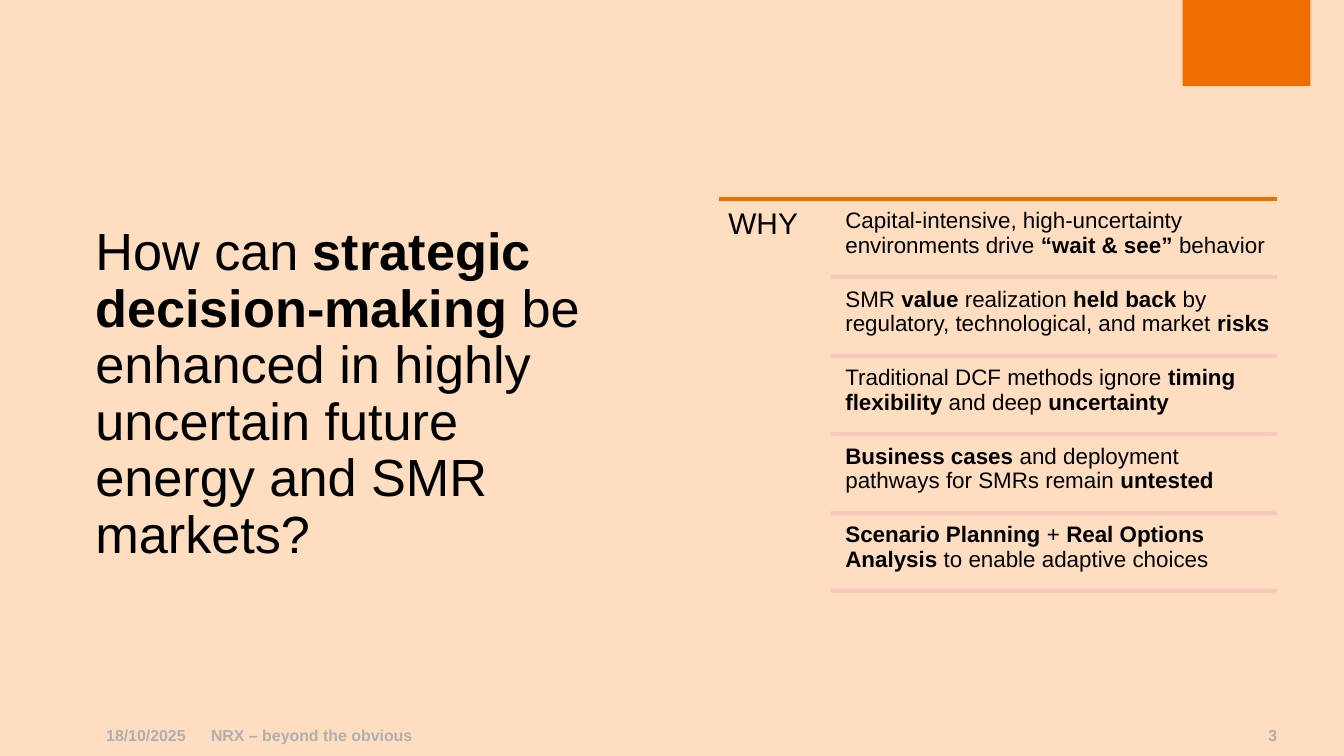
from lxml import etree
from pptx import Presentation
from pptx.dml.color import RGBColor
from pptx.enum import shapes, text
from pptx.oxml.ns import qn
from pptx.util import Inches, Pt

FONT = "Arial"
BACKGROUND, ORANGE, PINK = "FEDDC0", "F06E00", "F8C8BD"
BLACK, GREY = "000000", "AFAFAF"

# Text between ** marks is bold.
TITLE = ("How can **strategic decision-making **be enhanced in highly "
         "uncertain future energy and SMR markets?")
HEADING = "WHY"
REASONS = [
    "Capital-intensive, high-uncertainty environments drive **“wait & see” **behavior",
    "SMR **value** realization **held back **by regulatory, technological, and market **risks**",
    "Traditional DCF methods ignore **timing flexibility** and deep **uncertainty**",
    "**Business cases** and deployment pathways for SMRs remain **untested**",
    "**Scenario Planning** + **Real Options Analysis **to enable adaptive choices",
]
FOOTERS = [  # text, left, width, alignment
    ("**18/10/2025**", 0.79, 0.79, text.PP_ALIGN.LEFT),
    ("**NRX – beyond the obvious**", 1.57, 2.22, text.PP_ALIGN.LEFT),
    ("**3**", 8.94, 1.06, text.PP_ALIGN.CENTER),
]

SLIDE_WIDTH = 10
SLIDE_HEIGHT = SLIDE_WIDTH * 9 / 16
LIST_LEFT, LIST_RIGHT, LIST_TOP, LIST_BOTTOM = 5.35, 9.5, 1.48, 4.4
RULE_LEFT, REASON_LEFT = 6.18, 6.24
ROW_PITCH = (LIST_BOTTOM - LIST_TOP) / len(REASONS)
ROW_GAP, REASON_HEIGHT = 0.03, 0.56


def rgb(value):
    return RGBColor.from_string(value)


def write(shape, marked, size, color=BLACK, inset=0, spacing=0.9,
          align=text.PP_ALIGN.LEFT, anchor=text.MSO_ANCHOR.TOP):
    """Fill a shape with one paragraph, with ** switching bold on and off."""
    frame = shape.text_frame
    frame.word_wrap = True
    frame.auto_size = text.MSO_AUTO_SIZE.NONE
    frame.vertical_anchor = anchor
    frame.margin_left = frame.margin_right = Inches(inset)
    frame.margin_top = frame.margin_bottom = Inches(inset)
    paragraph = frame.paragraphs[0]
    paragraph.alignment = align
    paragraph.line_spacing = spacing
    for index, part in enumerate(marked.split("**")):
        if part:
            run = paragraph.add_run()
            run.text = part
            run.font.name = FONT
            run.font.size = Pt(size)
            run.font.bold = index % 2 == 1
            run.font.color.rgb = rgb(color)


def add_text(slide, left, top, width, height, marked, size, **style):
    box = slide.shapes.add_textbox(*map(Inches, (left, top, width, height)))
    write(box, marked, size, **style)


def add_rule(slide, left, top, color):
    rule = slide.shapes.add_connector(
        shapes.MSO_CONNECTOR.STRAIGHT,
        *map(Inches, (left, top, LIST_RIGHT, top)))
    rule.line.color.rgb = rgb(color)
    rule.line.width = Pt(2)
    etree.SubElement(rule._element.spPr, qn("a:effectLst"))


def main():
    deck = Presentation()
    deck.slide_width, deck.slide_height = Inches(SLIDE_WIDTH), Inches(SLIDE_HEIGHT)
    slide = deck.slides.add_slide(deck.slide_layouts[5])
    slide.background.fill.solid()
    slide.background.fill.fore_color.rgb = rgb(BACKGROUND)

    badge = slide.shapes.add_shape(
        shapes.MSO_SHAPE.RECTANGLE, *map(Inches, (8.8, 0, 0.95, 0.64)))
    badge.shadow.inherit = False
    badge.fill.solid()
    badge.fill.fore_color.rgb = rgb(ORANGE)
    badge.line.fill.background()

    title = slide.shapes.title
    title.left, title.top = Inches(0.71), Inches(1.46)
    title.width, title.height = Inches(3.97), Inches(2.96)
    write(title, TITLE, 28, anchor=text.MSO_ANCHOR.MIDDLE)

    add_rule(slide, LIST_LEFT, LIST_TOP, ORANGE)
    add_text(slide, LIST_LEFT, LIST_TOP, RULE_LEFT - LIST_LEFT,
             LIST_BOTTOM - LIST_TOP, HEADING, 16, inset=0.07)
    for row, reason in enumerate(REASONS):
        top = LIST_TOP + row * ROW_PITCH
        add_text(slide, REASON_LEFT, top + ROW_GAP, LIST_RIGHT - REASON_LEFT,
                 REASON_HEIGHT, reason, 12, inset=0.05)
        add_rule(slide, RULE_LEFT, top + ROW_PITCH, PINK)

    for footer, left, width, align in FOOTERS:
        add_text(slide, left, 5.4, width, 0.23, footer, 8.5,
                 color=GREY, spacing=1.0, align=align)

    deck.save("out.pptx")


if __name__ == "__main__":
    main()
